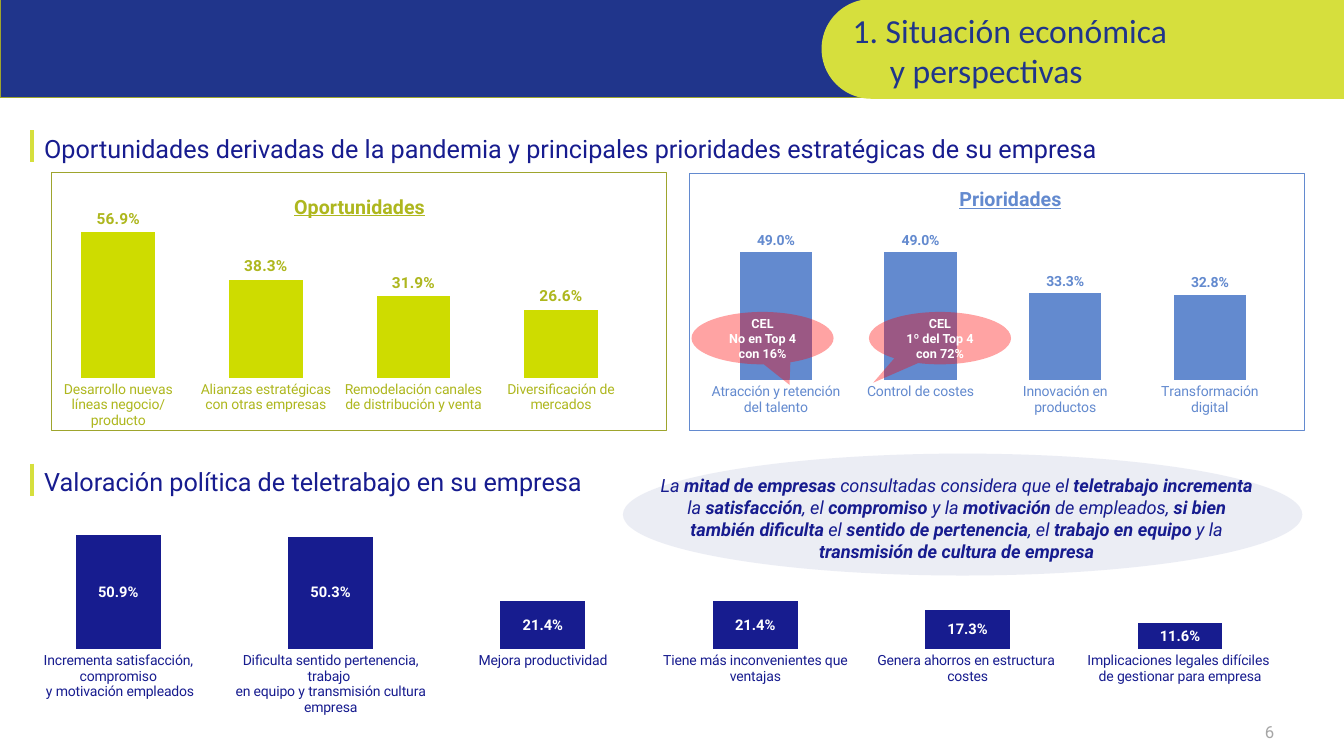
import pptx
import pptx.util
import pptx.dml.color
import pptx.chart.data
import pptx.enum.chart
import pptx.enum.shapes
import pptx.enum.text
import pptx.oxml
import pptx.oxml.ns
import lxml.etree

CELL = pptx.util.Inches(0.1)
COLUMNS, ROWS = 133.33, 75
NAVY, HEADER_BLUE, SKY = "171C8F", "20358B", "638ACF"
LIME, BRIGHT_LIME, OLIVE, DARK_OLIVE = "D6DF3D", "CEDC00", "AEB71E", "9EA52D"
WHITE, GREY, PALE_BLUE, RED = "FFFFFF", "A6A6A6", "AEB6D5", "FF0000"
SHAPES = pptx.enum.shapes.MSO_SHAPE
ALIGN = pptx.enum.text.PP_ALIGN
LABEL = pptx.enum.chart.XL_LABEL_POSITION


def rgb(value):
    return pptx.dml.color.RGBColor.from_string(value)


def cells(*counts):
    return [round(count * CELL) for count in counts]


def inside(box, column, row, columns, rows):
    return box[0] + column, box[1] + row, columns, rows


def child(parent, tag, **attributes):
    element = lxml.etree.SubElement(parent, pptx.oxml.ns.qn(tag))
    for name, value in attributes.items():
        element.set(name, str(value))
    return element


def style_font(font, size, color, bold=False, name="Roboto"):
    font.size, font.name, font.bold = pptx.util.Pt(size), name, bold
    font.color.rgb = rgb(color)


def write(frame, text, size=10, color=NAVY, name="Roboto", bold=False, italic=False,
          underline=False, align=ALIGN.LEFT, hanging=0):
    frame.word_wrap = True
    for number, line in enumerate(text.split("\n")):
        paragraph = frame.add_paragraph() if number else frame.paragraphs[0]
        paragraph.alignment = align
        if number and hanging:
            paragraph._p.get_or_add_pPr().set("marL", str(cells(hanging)[0]))
        for position, words in enumerate(line.split("**")):
            if words:
                run = paragraph.add_run()
                run.text = words
                style_font(run.font, size, color, bold or position % 2 == 1, name)
                run.font.italic, run.font.underline = italic, underline


def add_text(slide, box, text, **look):
    write(slide.shapes.add_textbox(*cells(*box)).text_frame, text, **look)


def add_shape(slide, kind, box, fill=None, opacity=100, line=None, adjustments=()):
    shape = slide.shapes.add_shape(kind, *cells(*box))
    shape.shadow.inherit = False
    for number, value in enumerate(adjustments):
        shape.adjustments[number] = value
    if fill:
        shape.fill.solid()
        shape.fill.fore_color.rgb = rgb(fill)
        if opacity < 100:
            color = shape._element.spPr.find(".//" + pptx.oxml.ns.qn("a:srgbClr"))
            child(color, "a:alpha", val=opacity * 1000)
    else:
        shape.fill.background()
    if line:
        shape.line.color.rgb = rgb(line)
        shape.line.width = pptx.util.Pt(1)
    else:
        shape.line.fill.background()
    return shape


def add_bars(slide, box, shares, plot, bar_color, axis_color, label_color,
             label_size, gap, position):
    data = pptx.chart.data.CategoryChartData()
    data.categories = list(shares)
    data.add_series("Series 1", list(shares.values()))
    chart = slide.shapes.add_chart(
        pptx.enum.chart.XL_CHART_TYPE.COLUMN_CLUSTERED, *cells(*box), data).chart
    chart.has_legend = chart.has_title = False
    style_font(chart.font, 10, axis_color)
    values, categories = chart.value_axis, chart.category_axis
    values.minimum_scale, values.maximum_scale = 0, 0.6
    values.has_major_gridlines = values.visible = False
    categories.major_tick_mark = pptx.enum.chart.XL_TICK_MARK.NONE
    categories.format.line.fill.background()
    style_font(categories.tick_labels.font, 10, axis_color)
    bars = chart.plots[0]
    bars.gap_width, bars.vary_by_categories = gap, False
    bars.series[0].format.fill.solid()
    bars.series[0].format.fill.fore_color.rgb = rgb(bar_color)
    bars.has_data_labels = True
    labels = bars.data_labels
    labels.show_value, labels.position = True, position
    labels.number_format, labels.number_format_is_linked = "0.0%", False
    style_font(labels.font, label_size, label_color, bold=True)
    area = chart._chartSpace.chart.plotArea
    for old in area.findall(pptx.oxml.ns.qn("c:layout")):
        area.remove(old)
    layout = child(area, "c:layout")
    area.insert(0, layout)
    manual = child(layout, "c:manualLayout")
    child(manual, "c:layoutTarget", val="inner")
    for side in "xy":
        child(manual, f"c:{side}Mode", val="edge")
    for side, share in zip("xywh", plot):
        child(manual, f"c:{side}", val=share)


def add_header(slide, box):
    add_shape(slide, SHAPES.RECTANGLE, inside(box, 0, -0.1, 90.8, 9.8),
              fill=HEADER_BLUE, line=DARK_OLIVE)
    left, length, height = 81.5, COLUMNS - 81.5, 9.9
    middle = left + length / 2
    tab = add_shape(slide, SHAPES.ROUND_2_SAME_RECTANGLE,
                    inside(box, middle - height / 2, (9.7 - length) / 2, height, length),
                    fill=LIME, adjustments=(0.5, 0))
    tab.rotation = 270
    add_text(slide, inside(box, 83.6, 0.5, 49, 9.1), "1. Situación económica\ny perspectivas",
             size=24, color=HEADER_BLUE, name="Calibri", hanging=3.7)


def add_heading(slide, box, text):
    left, top, _, height = box
    add_text(slide, inside(box, 0.2, -0.2, 113.6, 4), text, size=18, align=ALIGN.JUSTIFY)
    rule = slide.shapes.add_connector(pptx.enum.shapes.MSO_CONNECTOR.STRAIGHT,
                                      *cells(left, top, left, top + height))
    rule.line.color.rgb = rgb(LIME)
    rule.line.width = pptx.util.Pt(2.5)
    child(rule._element.spPr, "a:effectLst")


def add_panel(slide, box, title, title_at, chart_box, shares, plot, bar_color,
              text_color, frame_color, label_size):
    add_text(slide, inside(box, *title_at, 21.8, 3.4), title, size=14, color=text_color,
             bold=True, underline=True)
    add_bars(slide, inside(box, *chart_box), shares, plot, bar_color, text_color,
             text_color, label_size, 100, LABEL.OUTSIDE_END)
    add_shape(slide, SHAPES.RECTANGLE, box, line=frame_color)


def add_callout(slide, box, text, pointer):
    callout = add_shape(slide, SHAPES.OVAL_CALLOUT, box, fill=RED, opacity=36,
                        adjustments=pointer)
    callout.text_frame.vertical_anchor = pptx.enum.text.MSO_ANCHOR.MIDDLE
    write(callout.text_frame, text, size=9, color=WHITE, bold=True, align=ALIGN.CENTER)


def add_telework(slide, box):
    add_shape(slide, SHAPES.OVAL, inside(box, 61.8, 0, 67.4, 12.1), fill=PALE_BLUE, opacity=24)
    add_heading(slide, inside(box, 3.2, 1, 113.6, 3.2),
                "Valoración política de teletrabajo en su empresa")
    add_text(slide, inside(box, 64.4, 1.6, 61, 9.8),
             "La **mitad de empresas **consultadas considera que el **teletrabajo incrementa **"
             "la **satisfacción**, el** compromiso **y la **motivación** de empleados, "
             "**si bien también dificulta **el **sentido de pertenencia**, el "
             "**trabajo en equipo **y la **transmisión de cultura de empresa**",
             size=13, italic=True, align=ALIGN.CENTER)
    shares = {
        "Incrementa satisfacción, compromiso\n y motivación empleados": 0.509,
        "Dificulta sentido pertenencia, trabajo \nen equipo y transmisión cultura empresa": 0.503,
        "Mejora productividad": 0.214,
        "Tiene más inconvenientes que ventajas": 0.214,
        "Genera ahorros en estructura \ncostes": 0.173,
        "Implicaciones legales difíciles \nde gestionar para empresa": 0.116,
    }
    add_bars(slide, inside(box, 1.2, 6.1, 126.4, 22.5), shares, (0, 0, 1, 0.59),
             NAVY, NAVY, WHITE, 10.5, 150, LABEL.CENTER)
    add_text(slide, inside(box, 124.5, 26.1, 4, 3), "6", size=12, color=GREY)


def main():
    deck = pptx.Presentation()
    deck.slide_width, deck.slide_height = cells(COLUMNS, ROWS)
    slide = deck.slides.add_slide(deck.slide_layouts[6])
    add_header(slide, (0, 0, COLUMNS, 9.8))
    add_heading(slide, (3.2, 12.9, 113.6, 3.2),
                "Oportunidades derivadas de la pandemia y principales prioridades "
                "estratégicas de su empresa")
    add_panel(slide, (5.1, 17.1, 61, 25.6), "Oportunidades", (23.1, 1.7),
              (-1.9, 3.7, 61, 21.9),
              {"Desarrollo nuevas líneas negocio/producto": 0.569,
               "Alianzas estratégicas con otras empresas": 0.383,
               "Remodelación canales de distribución y venta": 0.319,
               "Diversificación de mercados": 0.266},
              (0.02, 0.06, 0.96, 0.7), BRIGHT_LIME, OLIVE, DARK_OLIVE, 11)
    priorities = (68.4, 17.2, 61, 25.5)
    add_panel(slide, priorities, "Prioridades", (25.8, 0.9), (0.2, 4.6, 59.8, 19.9),
              {"Atracción y retención del talento": 0.49, "Control de costes": 0.49,
               "Innovación en productos": 0.333, "Transformación digital": 0.328},
              (0.02, 0.02, 0.96, 0.78), SKY, SKY, SKY, 10)
    for column, text, pointer in ((17.8, "CEL\n1º del Top 4 con 72%", (-0.47, 0.85)),
                                  (0.2, "CEL\nNo en Top 4 con 16%", (0.19, 0.89))):
        add_callout(slide, inside(priorities, column, 13.75, 14.1, 5.2), text, pointer)
    add_telework(slide, (0, 45, COLUMNS, 30))
    deck.save("out.pptx")


if __name__ == "__main__":
    main()
